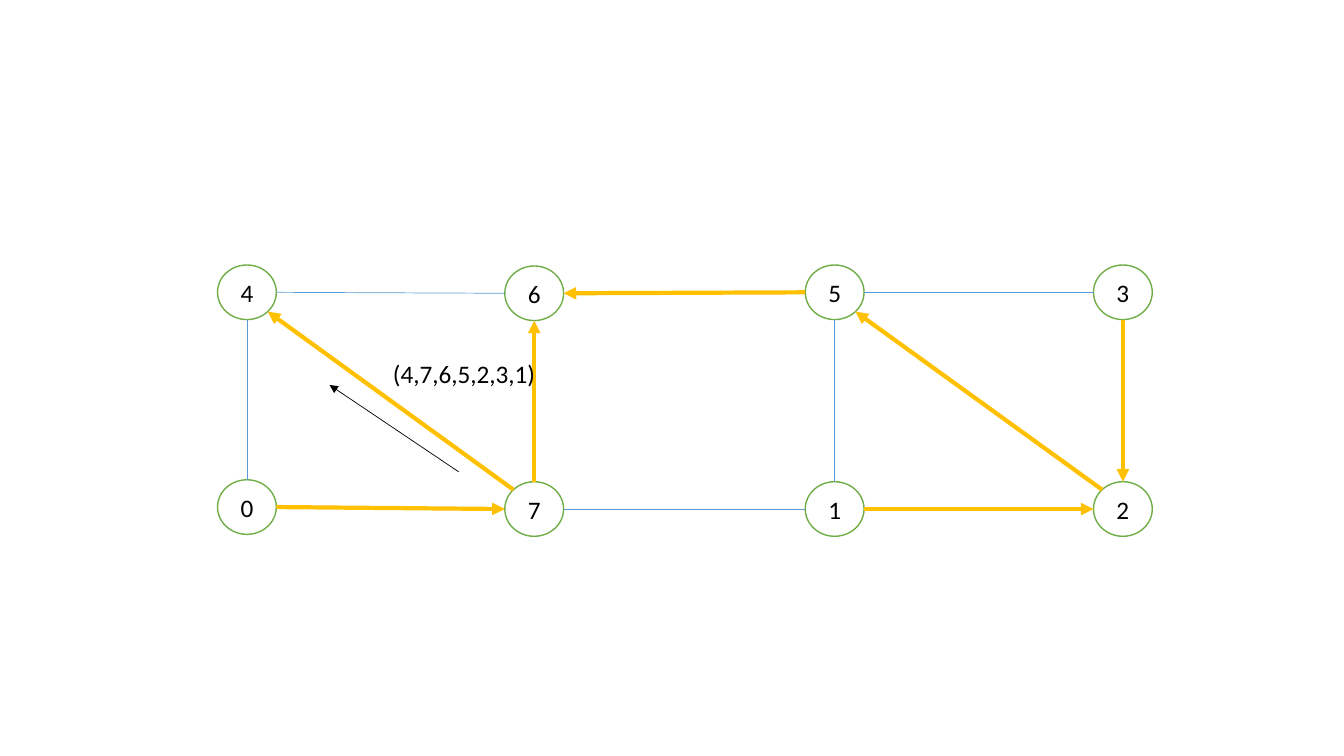
from math import sqrt

from lxml.etree import SubElement
from pptx import Presentation
from pptx.dml.color import RGBColor
from pptx.enum.shapes import MSO_CONNECTOR as Connector, MSO_SHAPE as Shape
from pptx.enum.text import MSO_ANCHOR as Anchor, PP_ALIGN as Align
from pptx.oxml.ns import qn
from pptx.util import Pt

COLORS = {
    "node": "FFFFFF",
    "outline": "70AD47",
    "edge": "5B9BD5",
    "path": "FFC000",
    "text": "000000",
}
NODE_WIDTH, NODE_HEIGHT = 42, 39
CENTERS = {
    "7": (381.6, 363.6),
    "5": (596.2, 208.8),
    "1": (596.2, 363.6),
    "3": (802.1, 208.8),
    "2": (802.1, 363.6),
    "6": (381.6, 209.5),
    "0": (176.4, 362.2),
    "4": (176.4, 208.8),
}
PLAIN_EDGES = ["71", "51", "53", "40", "46"]
PATH_EDGES = ["56", "76", "32", "12", "74", "25", "07"]


def color(name):
    return RGBColor.from_string(COLORS[name])


def write_text(frame, text, size=18, font="Calibri", fill="text", align=Align.LEFT):
    paragraph = frame.paragraphs[0]
    paragraph.alignment = align
    run = paragraph.add_run()
    run.text = text
    run.font.size = Pt(size)
    run.font.name = font
    run.font.color.rgb = color(fill)


def direction(distance):
    if abs(distance) < NODE_HEIGHT:
        return 0
    return 1 if distance > 0 else -1


def edge_ends(start, end):
    (x1, y1), (x2, y2) = CENTERS[start], CENTERS[end]
    across, down = direction(x2 - x1), direction(y2 - y1)
    scale = 1 / sqrt(2) if across and down else 1
    dx = across * scale * NODE_WIDTH / 2
    dy = down * scale * NODE_HEIGHT / 2
    return (x1 + dx, y1 + dy), (x2 - dx, y2 - dy)


class GraphSlide:
    def __init__(self, slide):
        self.slide = slide

    def node(self, label):
        x, y = CENTERS[label]
        shape = self.slide.shapes.add_shape(
            Shape.OVAL, Pt(x - NODE_WIDTH / 2), Pt(y - NODE_HEIGHT / 2),
            Pt(NODE_WIDTH), Pt(NODE_HEIGHT))
        shape.shadow.inherit = False
        shape.fill.solid()
        shape.fill.fore_color.rgb = color("node")
        shape.line.color.rgb = color("outline")
        shape.line.width = Pt(1)
        shape.text_frame.vertical_anchor = Anchor.MIDDLE
        write_text(shape.text_frame, label, align=Align.CENTER)

    def line(self, start, end, stroke="edge", width=0.5, arrow=False):
        connector = self.slide.shapes.add_connector(
            Connector.STRAIGHT, *(Pt(value) for value in (*start, *end)))
        connector.line.color.rgb = color(stroke)
        connector.line.width = Pt(width)
        if arrow:
            SubElement(connector.line._get_or_add_ln(), qn("a:tailEnd"), type="triangle")
        SubElement(connector._element.spPr, qn("a:effectLst"))

    def label(self, text, left, top, width, height):
        box = self.slide.shapes.add_textbox(Pt(left), Pt(top), Pt(width), Pt(height))
        box.text_frame.word_wrap = True
        write_text(box.text_frame, text)


def main():
    presentation = Presentation()
    presentation.slide_width, presentation.slide_height = Pt(960), Pt(540)
    graph = GraphSlide(presentation.slides.add_slide(presentation.slide_layouts[6]))
    for name in CENTERS:
        graph.node(name)
    for start, end in PLAIN_EDGES:
        graph.line(*edge_ends(start, end))
    for start, end in PATH_EDGES:
        graph.line(*edge_ends(start, end), stroke="path", width=3, arrow=True)
    graph.line((327.6, 337), (235.4, 275), stroke="text", arrow=True)
    graph.label("(4,7,6,5,2,3,1)", 273.6, 252.7, 129, 29)
    presentation.save("out.pptx")


if __name__ == "__main__":
    main()
